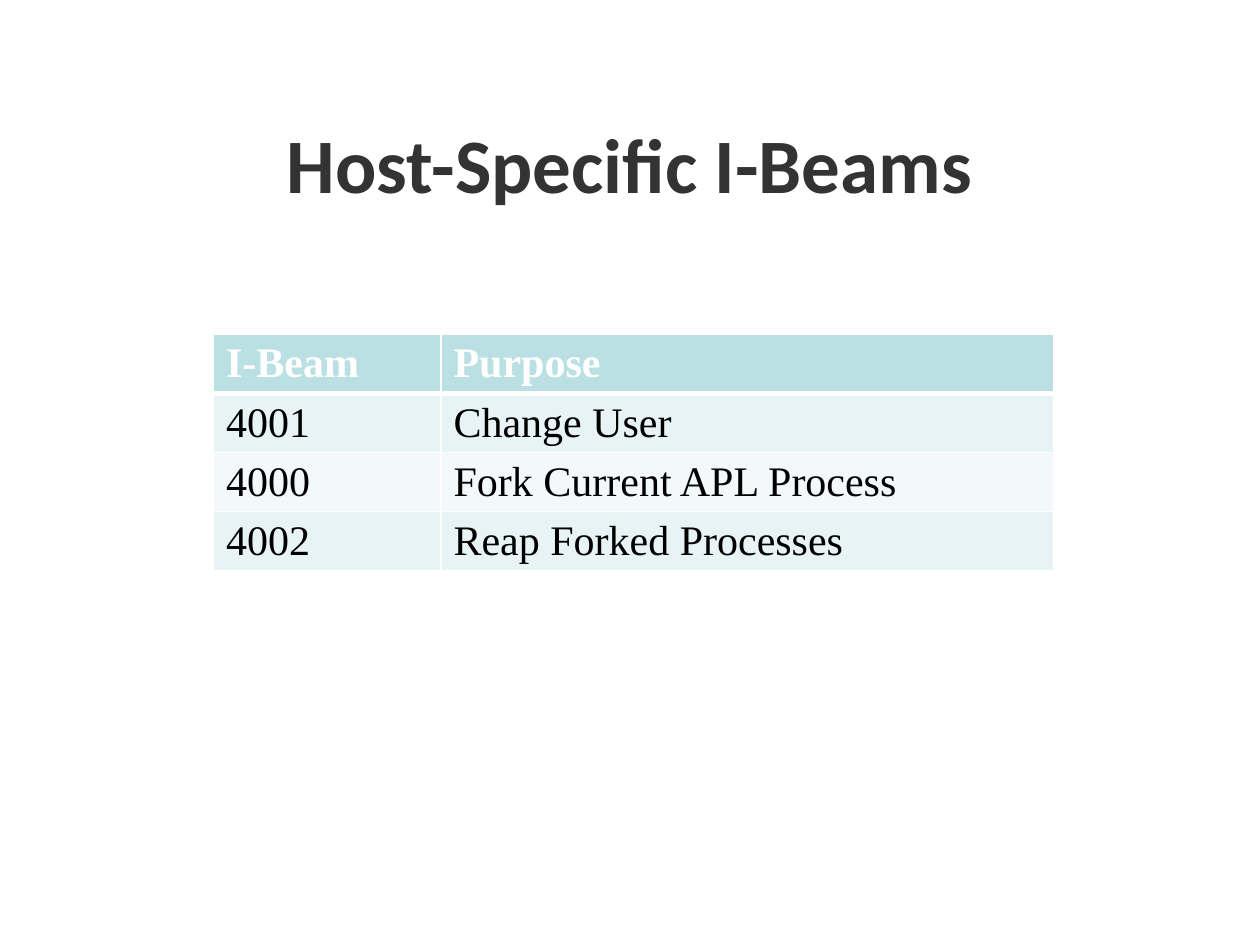
from lxml import etree
from pptx import Presentation
from pptx.dml.color import RGBColor
from pptx.enum.text import MSO_ANCHOR, PP_ALIGN
from pptx.oxml.ns import qn
from pptx.util import Pt

CENTER = PP_ALIGN.CENTER
MIDDLE = MSO_ANCHOR.MIDDLE
TITLE_ONLY = 5

IBEAMS = [
    ("I-Beam", "Purpose"),
    ("4001", "Change User"),
    ("4000", "Fork Current APL Process"),
    ("4002", "Reap Forked Processes"),
]


def rgb(value):
    return RGBColor.from_string(value)


class SlideBuilder:
    title_font = "Calibri"
    table_font = "Times New Roman"
    title_color = "333333"
    text_color = "000000"
    white = "FFFFFF"
    header_fill = "BBE0E3"
    band_fills = ("F3F9FA", "E7F3F4")

    def __init__(self, presentation):
        layout = presentation.slide_layouts[TITLE_ONLY]
        self.slide = presentation.slides.add_slide(layout)

    def add_run(self, paragraph, text, font, size, color, bold):
        run = paragraph.add_run()
        run.text = text
        run.font.name = font
        run.font.size = Pt(size)
        run.font.bold = bold
        run.font.color.rgb = rgb(color)

    def title(self, text, left, top, width, height):
        heading = self.slide.shapes.title
        heading.left, heading.top = Pt(left), Pt(top)
        heading.width, heading.height = Pt(width), Pt(height)
        frame = heading.text_frame
        frame.vertical_anchor = MIDDLE
        paragraph = frame.paragraphs[0]
        paragraph.alignment = CENTER
        self.add_run(paragraph, text, self.title_font, 44, self.title_color, True)

    def borders(self, cell, top, bottom):
        properties = cell._tc.get_or_add_tcPr()
        for side, width in (("L", 1), ("R", 1), ("T", top), ("B", bottom)):
            line = etree.SubElement(properties, qn(f"a:ln{side}"), w=str(Pt(width)))
            fill = etree.SubElement(line, qn("a:solidFill"))
            etree.SubElement(fill, qn("a:srgbClr"), val=self.white)

    def table(self, rows, left, top, column_widths, row_height):
        table = self.slide.shapes.add_table(
            len(rows), len(column_widths), Pt(left), Pt(top),
            Pt(sum(column_widths)), Pt(row_height * len(rows)),
        ).table
        for column, width in zip(table.columns, column_widths):
            column.width = Pt(width)
        for row_index, row in enumerate(rows):
            header = row_index == 0
            background = self.header_fill if header else self.band_fills[row_index % 2]
            color = self.white if header else self.text_color
            for column_index, text in enumerate(row):
                cell = table.cell(row_index, column_index)
                self.borders(cell, 3 if row_index == 1 else 1, 3 if header else 1)
                cell.fill.solid()
                cell.fill.fore_color.rgb = rgb(background)
                self.add_run(cell.text_frame.paragraphs[0], text,
                             self.table_font, 24, color, header)


def main():
    presentation = Presentation()
    presentation.slide_width = Pt(720)
    presentation.slide_height = Pt(540)
    builder = SlideBuilder(presentation)
    builder.title("Host-Specific I-Beams", 54, 48, 612, 90)
    builder.table(IBEAMS, 122, 191, (130, 350), 29.2)
    presentation.save("out.pptx")


if __name__ == "__main__":
    main()
